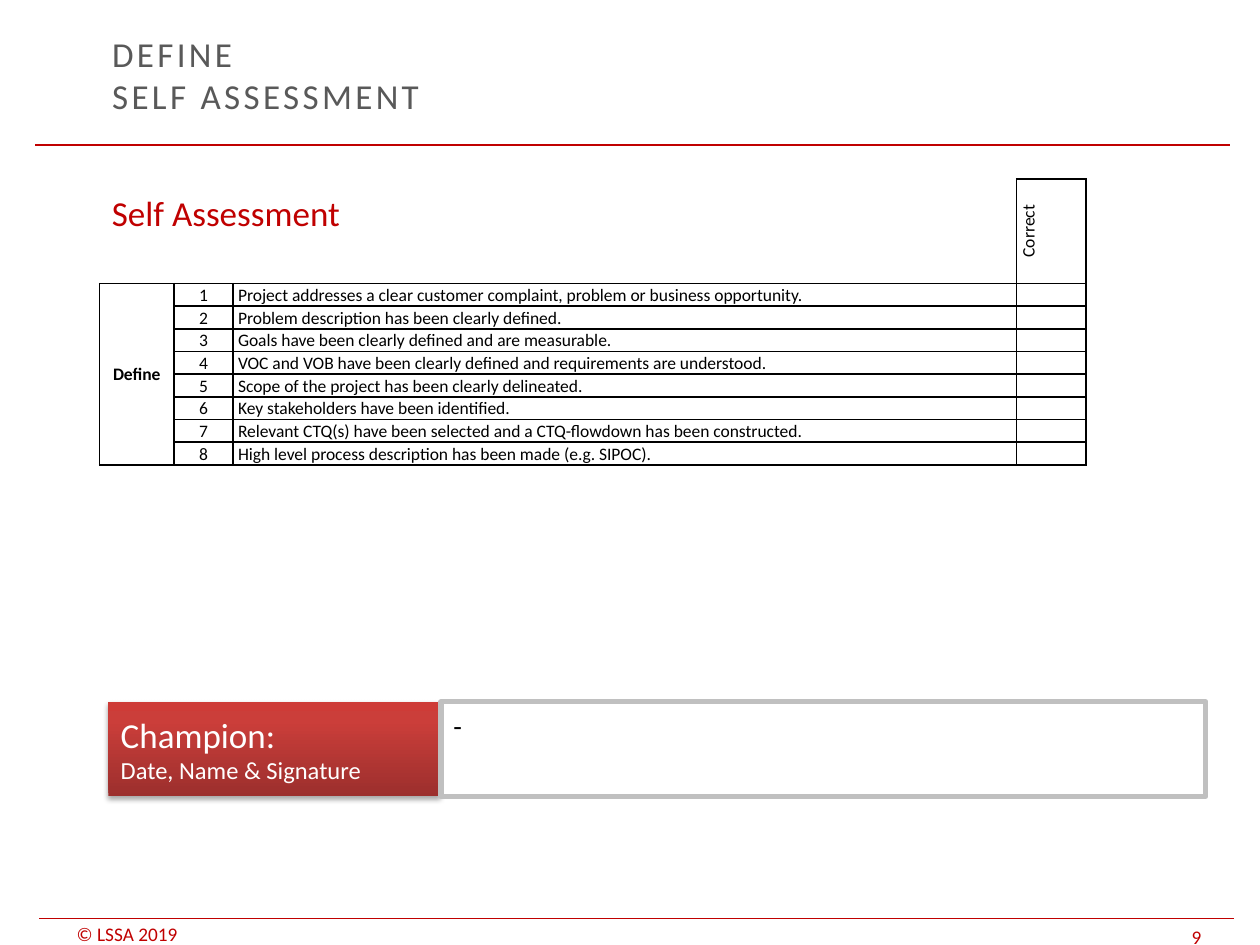
from copy import deepcopy
from lxml.etree import SubElement
from pptx import Presentation
from pptx.dml.color import RGBColor
from pptx.enum.shapes import MSO_CONNECTOR, MSO_SHAPE
from pptx.enum.text import MSO_ANCHOR, MSO_AUTO_SIZE, PP_ALIGN
from pptx.oxml import parse_xml
from pptx.oxml.ns import nsdecls, qn
from pptx.util import Inches, Pt

COLORS = {"red": "C00000", "gray": "595959", "black": "000000", "white": "FFFFFF",
          "frame": "C0C0C0", "dark": "9C2F2D", "mid": "CB3E3A", "light": "CE3B37"}
ITEMS = [
    "Project addresses a clear customer complaint, problem or business opportunity.",
    "Problem description has been clearly defined.",
    "Goals have been clearly defined and are measurable.",
    "VOC and VOB have been clearly defined and requirements are understood.",
    "Scope of the project has been clearly delineated.",
    "Key stakeholders have been identified.",
    "Relevant CTQ(s) have been selected and a CTQ-flowdown has been constructed.",
    "High level process description has been made (e.g. SIPOC).",
]


def color(name):
    return RGBColor.from_string(COLORS[name])


def write(frame, text, size, name, align=PP_ALIGN.LEFT):
    frame.text = text
    frame.word_wrap = True
    for para in frame.paragraphs:
        para.alignment = align
        para.font.name = "Calibri"
        para.font.size = Pt(size)
        para.font.color.rgb = color(name)


deck = Presentation()
deck.slide_width, deck.slide_height = Inches(10), Inches(7.5)
slide = deck.slides.add_slide(deck.slide_layouts[5])
shapes = slide.shapes

# Title
title = shapes.title
title.left, title.top = Inches(0.79), Inches(0.26)
title.width, title.height = Inches(7.09), Inches(0.66)
write(title.text_frame, "DEFINE\vSELF ASSESSMENT", 20, "gray")
title.text_frame.auto_size = MSO_AUTO_SIZE.NONE
title.text_frame.vertical_anchor = MSO_ANCHOR.MIDDLE
for run in title.text_frame.paragraphs[0].runs:
    run._r.get_or_add_rPr().set("spc", "190")

# Rules above and below the content
for left, top in [(0.28, 1.15), (0.31, 7.29)]:
    rule = shapes.add_connector(MSO_CONNECTOR.STRAIGHT, Inches(left), Inches(top),
                                Inches(left + 9.48), Inches(top))
    rule.line.color.rgb = color("red")
    rule.line.width = Pt(0.75)
    SubElement(rule._element.spPr, qn("a:effectLst"))

# Footer
for text, left, top, width, height in [("© LSSA 2019", 0.51, 7.32, 1.42, 0.18),
                                       ("9", 9.36, 7.28, 0.64, 0.25)]:
    foot = shapes.add_textbox(Inches(left), Inches(top), Inches(width), Inches(height))
    write(foot.text_frame, text, 11, "red")
    foot.text_frame.margin_top = foot.text_frame.margin_bottom = 0
    foot.text_frame.vertical_anchor = MSO_ANCHOR.BOTTOM

# Heading
head = shapes.add_textbox(Inches(0.79), Inches(1.47), Inches(6), Inches(0.5))
write(head.text_frame, "Self Assessment", 20, "red")

# Checklist table
count = len(ITEMS)
frame = shapes.add_table(count + 1, 4, Inches(0.79), Inches(1.42),
                         Inches(7.83), Inches(2.27))
table = frame.table
table.first_row = table.horz_banding = False
style = table._tbl.tblPr.find(qn("a:tableStyleId"))
style.text = "{2D5ABB26-0587-4C30-8999-92F81FD0307C}"  # no style, no grid
for col, width in zip(table.columns, [0.59, 0.47, 6.22, 0.55]):
    col.width = Inches(width)
for i, row in enumerate(table.rows):
    row.height = Inches(0.18 if i else 0.83)

rows = [["", "", "", "Correct"]]
rows += [["" if n > 1 else "Define", str(n), item, ""]
         for n, item in enumerate(ITEMS, 1)]
for i, row in enumerate(rows):
    for j, text in enumerate(row):
        cell = table.cell(i, j)
        write(cell.text_frame, text, 10, "black",
              PP_ALIGN.LEFT if j == 2 else PP_ALIGN.CENTER)
        cell.vertical_anchor = MSO_ANCHOR.BOTTOM if j == 2 else MSO_ANCHOR.MIDDLE
        cell.margin_left = Inches(0.04 if j == 2 else 0.01)
        cell.margin_right = cell.margin_top = Inches(0.01)
        cell.margin_bottom = 0
        props = cell._tc.get_or_add_tcPr()
        sides = "LRTB" if i or j == 3 else "RB" if j == 2 else "B"
        for side in sides:
            props.append(parse_xml(
                f'<a:ln{side} {nsdecls("a")} w="12700"><a:solidFill>'
                f'<a:srgbClr val="{COLORS["black"]}"/></a:solidFill></a:ln{side}>'))
        cell.fill.background()
table.cell(1, 0).text_frame.paragraphs[0].font.bold = True
table.cell(0, 3)._tc.tcPr.set("vert", "vert270")
table.cell(1, 0).merge(table.cell(count, 0))

# Champion label with gradient and soft shadow
label = shapes.add_shape(MSO_SHAPE.RECTANGLE, Inches(0.86), Inches(5.57),
                         Inches(2.63), Inches(0.75))
label.line.fill.background()
label.fill.gradient()
label.fill.gradient_angle = 90
stops = label._element.spPr.find(qn("a:gradFill")).find(qn("a:gsLst"))
stops.append(deepcopy(stops[-1]))
for stop, (place, name) in zip(label.fill.gradient_stops,
                               [(0, "dark"), (0.8, "mid"), (1, "light")]):
    stop.position = place
    stop.color.rgb = color(name)
label.shadow.inherit = False
label._element.spPr.find(qn("a:effectLst")).append(parse_xml(
    f'<a:outerShdw {nsdecls("a")} blurRad="39370" dist="22860" dir="5400000" '
    f'rotWithShape="0"><a:srgbClr val="{COLORS["black"]}"><a:alpha val="35000"/>'
    '</a:srgbClr></a:outerShdw>'))
write(label.text_frame, "Champion:\nDate, Name & Signature", 20, "white")
label.text_frame.paragraphs[1].font.size = Pt(14)
label.text_frame.vertical_anchor = MSO_ANCHOR.MIDDLE

# Signature field
field = shapes.add_shape(MSO_SHAPE.RECTANGLE, Inches(3.5), Inches(5.57),
                         Inches(6.07), Inches(0.75))
field.shadow.inherit = False
field.fill.solid()
field.fill.fore_color.rgb = color("white")
field.line.color.rgb = color("frame")
field.line.width = Pt(3)
write(field.text_frame, "-", 16, "black")
field.text_frame.vertical_anchor = MSO_ANCHOR.TOP

deck.save("out.pptx")
